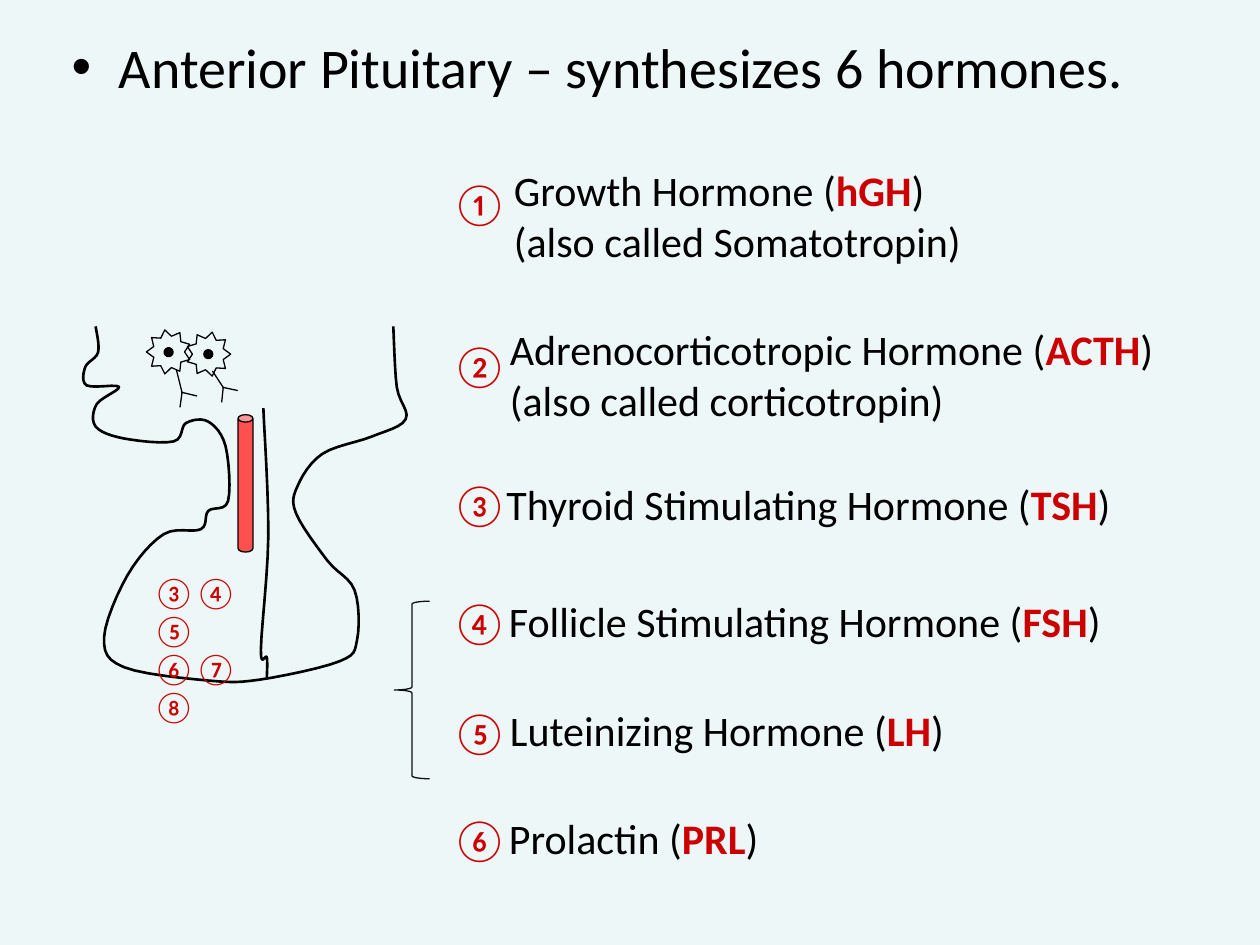
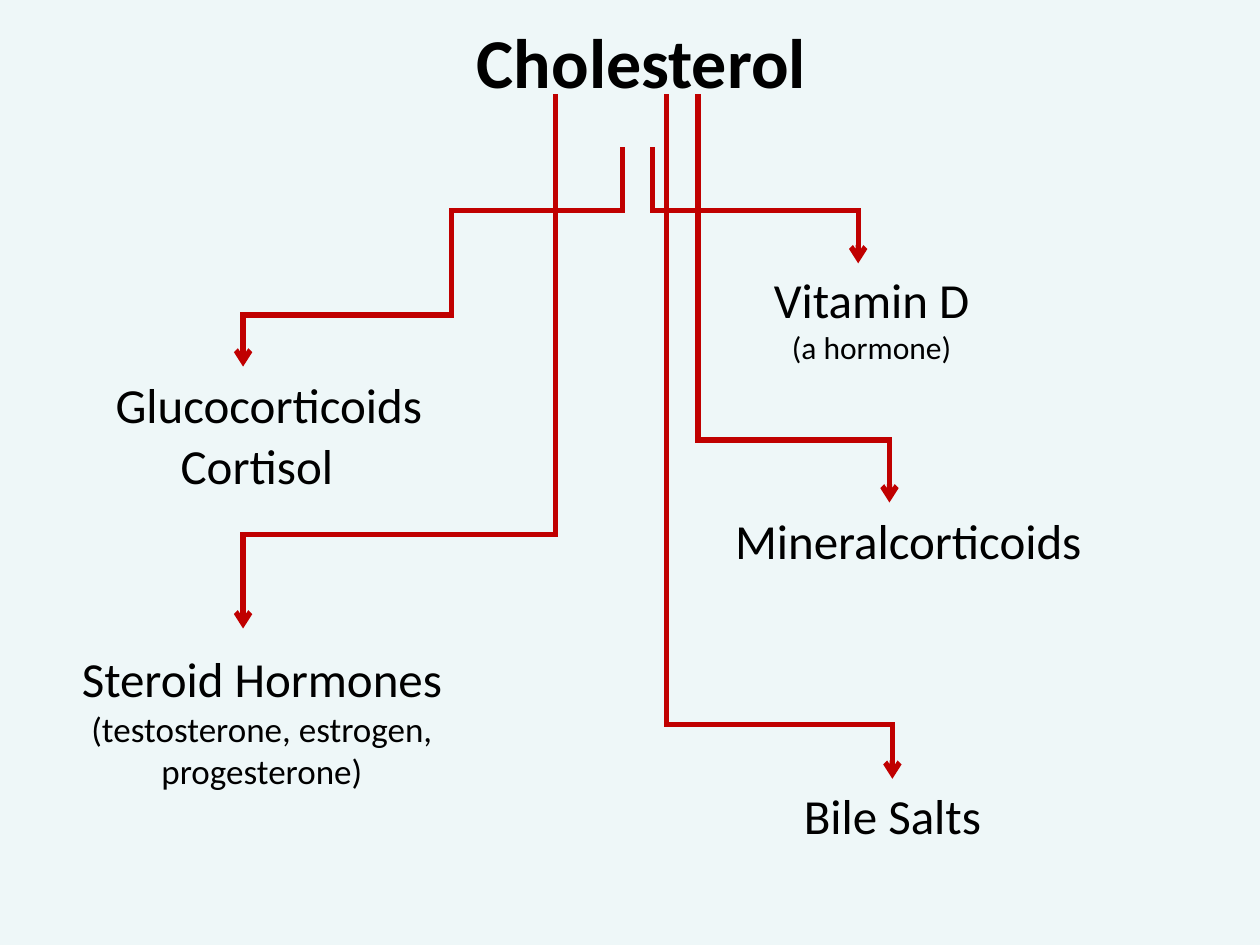
from dataclasses import dataclass
from math import cos, pi, sin

from lxml import etree
from pptx import Presentation
from pptx.dml.color import RGBColor
from pptx.enum.shapes import MSO_CONNECTOR, MSO_SHAPE
from pptx.enum.text import MSO_ANCHOR, MSO_AUTO_SIZE, PP_ALIGN
from pptx.oxml.ns import qn
from pptx.util import Cm, Pt

LEFT, CENTER = PP_ALIGN.LEFT, PP_ALIGN.CENTER
TOP, MIDDLE = MSO_ANCHOR.TOP, MSO_ANCHOR.MIDDLE
NO_FIT = MSO_AUTO_SIZE.NONE
STRAIGHT = MSO_CONNECTOR.STRAIGHT
OVAL, CAN, BRACE = MSO_SHAPE.OVAL, MSO_SHAPE.CAN, MSO_SHAPE.LEFT_BRACE


@dataclass(frozen=True)
class Theme:
    font: str = "Calibri"
    back: RGBColor = RGBColor(0xEE, 0xF7, 0xF8)
    ink: RGBColor = RGBColor(0, 0, 0)
    soft: RGBColor = RGBColor(0x0D, 0x0D, 0x0D)
    key: RGBColor = RGBColor(0xCC, 0, 0)
    route: RGBColor = RGBColor(0xC0, 0, 0)
    blood: RGBColor = RGBColor(0xFF, 0x50, 0x50)
    title: int = 40
    head: int = 32
    topic: int = 28
    item: int = 24
    minor: int = 20
    small: int = 18
    thin: float = 0.75
    edge: float = 1.5
    thick: float = 3


T = Theme()


def write(shape, box, lines, align=LEFT, anchor=TOP):
    """Place a shape by a box in cm; each line is a list of (text, size, colour, bold)."""
    shape.left, shape.top, shape.width, shape.height = [Cm(n) for n in box]
    frame = shape.text_frame
    frame.word_wrap = True
    frame.auto_size = NO_FIT
    frame.vertical_anchor = anchor
    for i, line in enumerate(lines):
        para = frame.add_paragraph() if i else frame.paragraphs[0]
        para.alignment = align
        for text, size, color, bold in line:
            run = para.add_run()
            run.text = text
            run.font.name = T.font
            run.font.size = Pt(size)
            run.font.bold = bold
            run.font.color.rgb = color


def draw(page, start, end, color, width):
    """Draw a straight line between two points in cm, with square ends that fill corners."""
    line = page.shapes.add_connector(STRAIGHT, *[Cm(n) for n in (*start, *end)])
    line.line.color.rgb = color
    line.line.width = Pt(width)
    line.line._get_or_add_ln().set("cap", "sq")
    etree.SubElement(line._element.spPr, qn("a:effectLst"))
    return line


deck = Presentation()
deck.slide_width, deck.slide_height = Cm(25.4), Cm(19.05)
fill = deck.slide_master.background.fill
fill.solid()
fill.fore_color.rgb = T.back
layout = deck.slide_layouts[5]

# Slide 1: anterior pituitary, with a bulleted title
page = deck.slides.add_slide(layout)
title = page.shapes.title
write(title, (1.19, 0.53, 23.57, 1.93),
      [[("Anterior Pituitary – synthesizes 6 hormones.", T.head, T.ink, False)]])
props = title.text_frame.paragraphs[0]._p.get_or_add_pPr()
props.set("marL", str(Cm(0.95)))
props.set("indent", str(-Cm(0.95)))
etree.SubElement(props, qn("a:buFont")).set("typeface", "Arial")
etree.SubElement(props, qn("a:buChar")).set("char", "•")

# The gland is one curve, from the brain down the stalk, round both lobes and up
brain_left = [(1.93, 6.58), (1.98, 7.1), (1.72, 7.4), (1.75, 7.77), (2.4, 7.8),
              (1.95, 8.15), (1.93, 8.6), (2.5, 8.84), (3.5, 8.9)]
stalk_left = [(3.75, 8.53), (4.2, 8.5), (4.55, 9), (4.6, 10.1), (4.2, 10.3)]
front_lobe = [(4.05, 10.67), (3.3, 10.77), (2.57, 11.6), (2.1, 12.85),
              (2.5, 13.45), (4.2, 13.72), (5.25, 13.7)]
rear_lobe = [(6.85, 13.33), (7.2, 12.9), (7.15, 11.9), (6.6, 11.3)]
stalk_right = [(5.97, 10.35), (6, 9.8), (6.5, 9.15)]
brain_right = [(7.5, 8.8), (8.18, 8.45), (8, 7.8), (7.93, 6.58)]
gland = brain_left + stalk_left + front_lobe + rear_lobe + stalk_right + brain_right
wall = [(5.38, 13.67), (5.38, 13.25), (5.26, 13.1), (5.41, 10.8), (5.31, 8.23)]

# A Catmull-Rom spline rounds each curve: STEPS short lines between two knots
STEPS = 6
for knots in (gland, wall):
    padded = [knots[0], *knots, knots[-1]]
    trace = []
    for quad in zip(padded, padded[1:], padded[2:], padded[3:]):
        for step in range(1, STEPS + 1):
            t = step / STEPS
            trace.append([
                Cm(b + t * (c - a) / 2 + t**2 * (2 * a - 5 * b + 4 * c - d) / 2
                   + t**3 * (3 * b - a - 3 * c + d) / 2)
                for a, b, c, d in zip(*quad)])
    pen = page.shapes.build_freeform(*[Cm(n) for n in knots[0]])
    pen.add_line_segments(trace, close=False)
    curve = pen.convert_to_shape()
    curve.shadow.inherit = False
    curve.fill.background()
    curve.line.color.rgb = T.ink
    curve.line.width = Pt(T.edge)

# A nerve cell is a star round a dot, with a stem that forks into two tips
SPIKES, OUTER, INNER, DOT = 9, 0.45, 0.32, 0.18
cells = [
    # centre, turn, stem start, fork, tips
    ((4.2, 7.14), 0, (4.29, 7.49), (4.5, 7.81), (4.47, 8.1), (4.78, 7.87)),
    ((3.4, 7.1), 20, (3.56, 7.47), (3.67, 7.91), (3.63, 8.2), (3.96, 7.98)),
]
for (x, y), turn, stem, fork, *tips in cells:
    star = []
    for i in range(2 * SPIKES):
        reach = INNER if i % 2 else OUTER
        angle = i * pi / SPIKES
        star.append((Cm(x + reach * cos(angle)), Cm(y + reach * sin(angle))))
    cell = page.shapes.add_group_shape()
    pen = cell.shapes.build_freeform(*star[0])
    pen.add_line_segments(star[1:], close=True)
    ring = pen.convert_to_shape()
    ring.fill.background()
    core = cell.shapes.add_shape(OVAL, Cm(x - DOT / 2), Cm(y - DOT / 2), Cm(DOT), Cm(DOT))
    core.fill.solid()
    core.fill.fore_color.rgb = T.ink
    for part in (ring, core):
        part.rotation = turn
        part.shadow.inherit = False
        part.line.color.rgb = T.ink
        part.line.width = Pt(T.thin)
    for end in (stem, *tips):
        draw(page, fork, end, T.ink, T.thin)

vessel = page.shapes.add_shape(CAN, Cm(4.8), Cm(8.36), Cm(0.3), Cm(2.77))
vessel.adjustments[0] = 0.5
vessel.fill.solid()
vessel.fill.fore_color.rgb = T.blood
brace = page.shapes.add_shape(BRACE, Cm(7.95), Cm(12.12), Cm(0.71), Cm(3.58))
brace.fill.background()
for shape, color in ((vessel, T.ink), (brace, T.soft)):
    shape.shadow.inherit = False
    shape.line.color.rgb = color
    shape.line.width = Pt(T.thin)

write(page.shapes.add_textbox(0, 0, 0, 0), (2.84, 11.43, 2.21, 1.78),
      [[(text, T.small, T.key, False)] for text in ("③④⑤", "⑥⑦⑧")])

# Numbered hormones; a label grows by one row when there is another name
MARK_LEFT, MARK_SIZE, LABEL_HEIGHT, ROW = 8.86, 1.27, 1.3, 1.01
hormones = [
    # mark, its top, label left, top, width, name, short name, other name
    ("①", 3.45, 10.11, 3.2, 9.6, "Growth Hormone", "hGH", "Somatotropin"),
    ("②", 6.71, 10.03, 6.4, 13.56, "Adrenocorticotropic Hormone", "ACTH", "corticotropin"),
    ("③", 9.53, 9.96, 9.53, 12.8, "Thyroid Stimulating Hormone", "TSH", None),
    ("④", 11.91, 10.01, 11.89, 12.55, "Follicle Stimulating Hormone", "FSH", None),
    ("⑤", 14.12, 10.03, 14.07, 9.35, "Luteinizing Hormone", "LH", None),
    ("⑥", 16.28, 10.01, 16.26, 5.6, "Prolactin", "PRL", None),
]
for mark, mark_top, left, top, width, name, short, other in hormones:
    write(page.shapes.add_textbox(0, 0, 0, 0),
          (MARK_LEFT, mark_top, MARK_SIZE, MARK_SIZE), [[(mark, T.item, T.key, False)]])
    lines = [[(f"{name} (", T.item, T.ink, False),
              (short, T.item, T.key, True),
              (")", T.item, T.ink, False)]]
    if other:
        lines.append([(f"(also called {other})", T.item, T.ink, False)])
    height = LABEL_HEIGHT + ROW * (len(lines) - 1)
    write(page.shapes.add_textbox(0, 0, 0, 0), (left, top, width, height), lines)

# Slide 2: what cholesterol becomes
page = deck.slides.add_slide(layout)
write(page.shapes.title, (9.07, 0.25, 7.72, 1.96),
      [[("Cholesterol", T.title, T.ink, True)]], CENTER)

# A route leaves its start downwards; its stops are y, x, y ... in turn
HIGH, LOW, SHELF, LEFT_END = 1.95, 3.02, 4.24, 4.9
branches = [
    # label middle, top, width, height, anchor, lines, route start, stops
    (17.57, 5.31, 5.92, 2.24, TOP,
     [("Vitamin D", T.topic), ("(a hormone)", T.small)],
     (13.16, LOW), [SHELF, 17.3, 5.31]),
    (5.18, 8.64, 5.08, 1.45, MIDDLE, [("Cortisol", T.topic)], None, []),
    (5.42, 7.42, 6.99, 1.45, MIDDLE, [("Glucocorticoids", T.topic)],
     (12.55, LOW), [SHELF, 9.1, 6.35, LEFT_END, 7.39]),
    (18.31, 10.16, 8.89, 1.45, MIDDLE, [("Mineralcorticoids", T.topic)],
     (14.07, HIGH), [8.87, 17.93, 10.13]),
    (5.28, 12.93, 8.89, 3.18, MIDDLE,
     [("Steroid Hormones", T.topic), ("(testosterone, estrogen,", T.minor),
      ("progesterone)", T.minor)],
     (11.2, HIGH), [10.78, LEFT_END, 12.67]),
    (17.99, 15.7, 5.92, 1.45, MIDDLE, [("Bile Salts", T.topic)],
     (13.44, HIGH), [14.6, 17.99, 15.7]),
]
for mid, top, width, height, anchor, lines, spot, stops in branches:
    label = page.shapes.add_textbox(0, 0, 0, 0)
    write(label, (mid - width / 2, top, width, height),
          [[(text, size, T.ink, False)] for text, size in lines], CENTER, anchor)
    for i, stop in enumerate(stops):
        goal = (stop, spot[1]) if i % 2 else (spot[0], stop)
        line = draw(page, spot, goal, T.route, T.thick)
        spot = goal
    if stops:
        etree.SubElement(line.line._get_or_add_ln(), qn("a:tailEnd")).set("type", "arrow")
    if spot == (mid, top):
        line.end_connect(label, 0)

deck.save("out.pptx")
